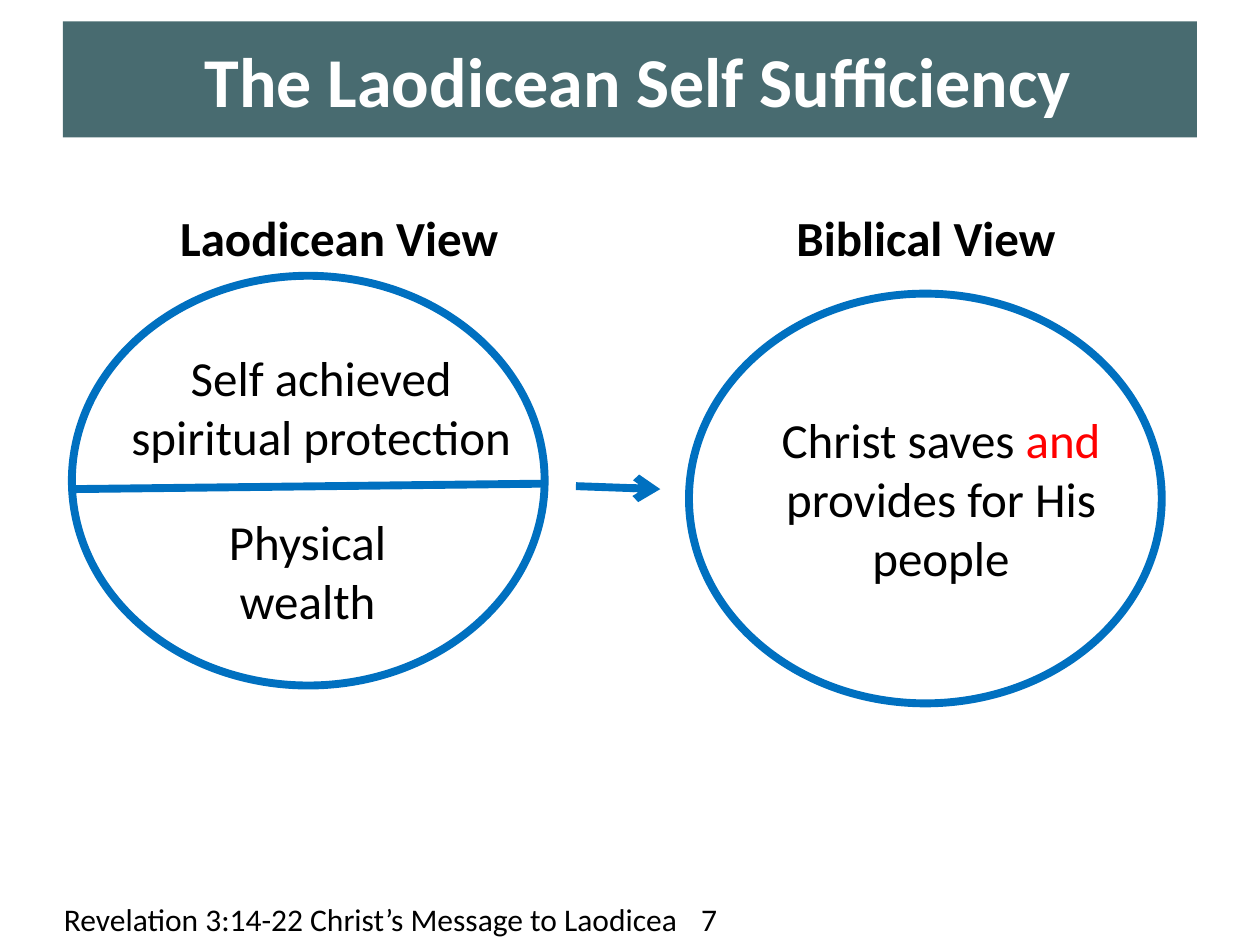
from dataclasses import dataclass

from lxml import etree
from pptx import Presentation
from pptx.dml.color import RGBColor
from pptx.enum.shapes import MSO_CONNECTOR, MSO_SHAPE
from pptx.enum.text import MSO_ANCHOR, PP_ALIGN
from pptx.oxml.ns import qn
from pptx.util import Cm, Pt

RECT = MSO_SHAPE.RECTANGLE
OVAL = MSO_SHAPE.OVAL
STRAIGHT = MSO_CONNECTOR.STRAIGHT
TOP = MSO_ANCHOR.TOP
MIDDLE = MSO_ANCHOR.MIDDLE
LEFT = PP_ALIGN.LEFT
CENTER = PP_ALIGN.CENTER


@dataclass(frozen=True)
class Theme:
    """Hold the colours, font and sizes of the slide."""

    font: str = "Calibri"
    band: RGBColor = RGBColor(0x48, 0x6B, 0x70)
    blue: RGBColor = RGBColor(0x00, 0x70, 0xC0)
    red: RGBColor = RGBColor(0xFF, 0x00, 0x00)
    black: RGBColor = RGBColor(0x00, 0x00, 0x00)
    white: RGBColor = RGBColor(0xFF, 0xFF, 0xFF)
    title: Pt = Pt(40)
    body: Pt = Pt(28)
    foot: Pt = Pt(18)
    line: Pt = Pt(4.5)


THEME = Theme()


def write(frame, parts, size=THEME.body, color=THEME.black, bold=False,
          align=CENTER, anchor=TOP):
    """Fill a frame with one paragraph of (text, colour) parts."""
    frame.word_wrap = True
    frame.vertical_anchor = anchor
    para = frame.paragraphs[0]
    para.alignment = align
    for text, tint in parts:
        run = para.add_run()
        run.text = text
        run.font.name = THEME.font
        run.font.size = size
        run.font.bold = bold
        run.font.color.rgb = tint or color


def add_text(slide, box, *parts, **style):
    """Add a text box at box, given in centimetres."""
    shape = slide.shapes.add_textbox(*map(Cm, box))
    write(shape.text_frame, parts, **style)


def add_band(slide, box, text):
    """Add the filled title band."""
    band = slide.shapes.add_shape(RECT, *map(Cm, box))
    band.shadow.inherit = False
    band.fill.solid()
    band.fill.fore_color.rgb = THEME.band
    band.line.fill.background()
    write(band.text_frame, [(text, None)], size=THEME.title,
          color=THEME.white, bold=True, anchor=MIDDLE)


def add_ring(shapes, left, top):
    """Add an unfilled ellipse."""
    ring = shapes.add_shape(OVAL, Cm(left), Cm(top), Cm(9.53), Cm(8.26))
    ring.shadow.inherit = False
    ring.fill.background()
    ring.line.color.rgb = THEME.blue
    ring.line.width = THEME.line


def add_line(shapes, ends, arrow=False):
    """Add a straight line, with an arrowhead at its end if asked."""
    line = shapes.add_connector(STRAIGHT, *map(Cm, ends))
    line.line.color.rgb = THEME.blue
    line.line.width = THEME.line
    props = line._element.spPr
    if arrow:
        etree.SubElement(props.find(qn("a:ln")), qn("a:tailEnd"), type="arrow")
    etree.SubElement(props, qn("a:effectLst"))


def main():
    """Build and save the slide."""
    deck = Presentation()
    deck.slide_width, deck.slide_height = Cm(25.4), Cm(19.05)
    slide = deck.slides.add_slide(deck.slide_layouts[6])

    add_text(slide, (1.04, 17.98, 23.52, 1.07),
             ("Revelation 3:14-22 Christ’s Message to Laodicea\t 7", None),
             size=THEME.foot, align=LEFT, anchor=MIDDLE)
    add_band(slide, (1.27, 0.43, 22.86, 2.34), " The Laodicean Self Sufficiency")

    add_text(slide, (1.98, 6.88, 8.99, 2.64),
             ("Self achieved spiritual protection", None))
    halves = slide.shapes.add_group_shape().shapes
    add_ring(halves, 1.45, 5.56)
    add_line(halves, (1.45, 9.86, 10.97, 9.75))
    add_text(slide, (3.56, 10.19, 5.28, 2.64), ("Physical wealth", None))

    for left, head in ((2.62, "Laodicean View"), (14.45, "Biblical View")):
        add_text(slide, (left, 4.06, 8.43, 1.45), (head, None), bold=True)

    add_ring(slide.shapes, 13.89, 5.92)
    add_text(slide, (14.5, 8.13, 8.94, 3.84), ("Christ saves ", None),
             ("and", THEME.red), (" provides for His people", None))
    add_line(slide.shapes, (11.61, 9.8, 13.31, 9.86), arrow=True)

    deck.save("out.pptx")


if __name__ == "__main__":
    main()
